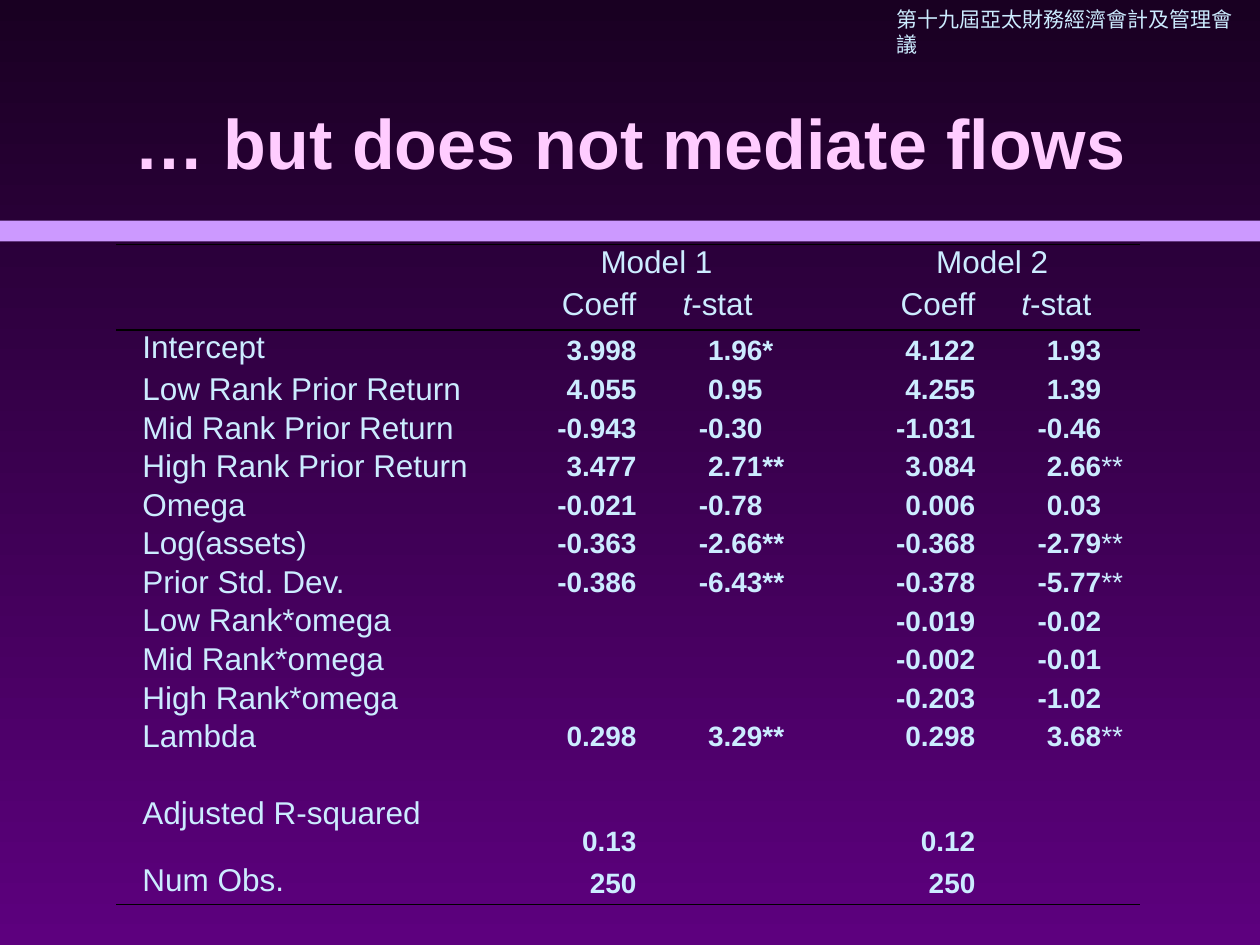
"""Build a slide with a regression table comparing two models of flows."""
from typing import NamedTuple

from lxml import etree
from pptx import Presentation
from pptx.dml.color import RGBColor
from pptx.enum.shapes import MSO_SHAPE
from pptx.enum.text import MSO_ANCHOR, PP_ALIGN
from pptx.oxml.ns import qn
from pptx.util import Cm, Pt

LEFT, CENTER, RIGHT = PP_ALIGN.LEFT, PP_ALIGN.CENTER, PP_ALIGN.RIGHT
TOP, MIDDLE, BOTTOM = MSO_ANCHOR.TOP, MSO_ANCHOR.MIDDLE, MSO_ANCHOR.BOTTOM
RECTANGLE = MSO_SHAPE.RECTANGLE
PLAIN_STYLE = "{2D5ABB26-0587-4C30-8999-92F81FD0307C}"
TITLE_ONLY = 5
COLORS = {
    "night": "190022",
    "violet": "5D007E",
    "band": "CC99FF",
    "title": "FFCCFF",
    "text": "CCECFF",
    "rule": "000000",
}
COLUMN_WIDTHS = [0.53, 7.72, 2.44, 2.34, 1.57, 2.92, 2.34, 0.79]
ROW_HEIGHTS = [0.84] * 3 + [0.76] * 11 + [1.35, 0.84]
LABEL_COLUMN = 1
MODEL_COLUMNS = (2, 5)


class CellStyle(NamedTuple):
    align: PP_ALIGN
    anchor: MSO_ANCHOR
    size: int
    bold: bool = False
    left: float = 0
    right: float = 0
    bottom: float = 0.1


class Estimate(NamedTuple):
    coefficient: str
    t_stat: str = ""
    stars: str = ""


class ResultRow(NamedTuple):
    label: str
    model_1: Estimate
    model_2: Estimate


LABEL = CellStyle(LEFT, TOP, 18, bottom=0)
HEADING = CellStyle(RIGHT, TOP, 18, right=0.2)
COEFFICIENT = CellStyle(RIGHT, BOTTOM, 16, True, right=0.2)
T_STAT = CellStyle(RIGHT, BOTTOM, 16, True)
STARS = CellStyle(LEFT, BOTTOM, 16, True)
MODEL_INDENTS = (0.71, 1.06)
BLANK = Estimate("")
RESULTS = [
    ResultRow("Intercept", Estimate("3.998", "1.96", "*"), Estimate("4.122", "1.93")),
    ResultRow("Low Rank Prior Return", Estimate("4.055", "0.95"), Estimate("4.255", "1.39")),
    ResultRow("Mid Rank Prior Return", Estimate("-0.943", "-0.30"), Estimate("-1.031", "-0.46")),
    ResultRow("High Rank Prior Return", Estimate("3.477", "2.71", "**"), Estimate("3.084", "2.66", "**")),
    ResultRow("Omega", Estimate("-0.021", "-0.78"), Estimate("0.006", "0.03")),
    ResultRow("Log(assets)", Estimate("-0.363", "-2.66", "**"), Estimate("-0.368", "-2.79", "**")),
    ResultRow("Prior Std. Dev.", Estimate("-0.386", "-6.43", "**"), Estimate("-0.378", "-5.77", "**")),
    ResultRow("Low Rank*omega", BLANK, Estimate("-0.019", "-0.02")),
    ResultRow("Mid Rank*omega", BLANK, Estimate("-0.002", "-0.01")),
    ResultRow("High Rank*omega", BLANK, Estimate("-0.203", "-1.02")),
    ResultRow("Lambda", Estimate("0.298", "3.29", "**"), Estimate("0.298", "3.68", "**")),
    ResultRow("", BLANK, BLANK),
    ResultRow("Adjusted R-squared", Estimate("0.13"), Estimate("0.12")),
    ResultRow("Num Obs.", Estimate("250"), Estimate("250")),
]


def color(name: str) -> RGBColor:
    return RGBColor.from_string(COLORS[name])


def format_runs(paragraph, size: int, color_name: str, bold: bool = False, font_name: str = "Arial") -> None:
    for run in paragraph.runs:
        run.font.name = font_name
        run.font.size = Pt(size)
        run.font.bold = bold
        run.font.color.rgb = color(color_name)


def write_cell(cell, text: str, style: CellStyle) -> None:
    if not text:
        return
    paragraph = cell.text_frame.paragraphs[0]
    paragraph.text = text
    paragraph.alignment = style.align
    format_runs(paragraph, style.size, "text", style.bold)
    cell.vertical_anchor = style.anchor
    cell.margin_left = Cm(style.left)
    cell.margin_right = Cm(style.right)
    cell.margin_bottom = Cm(style.bottom)


def write_t_heading(cell) -> None:
    write_cell(cell, "t", HEADING)
    paragraph = cell.text_frame.paragraphs[0]
    paragraph.add_run().text = "-stat"
    format_runs(paragraph, HEADING.size, "text")
    paragraph.runs[0].font.italic = True


def rule_row(table, row: int, edge: str) -> None:
    for column in range(len(COLUMN_WIDTHS)):
        properties = table.cell(row, column)._tc.get_or_add_tcPr()
        line = etree.Element(qn(edge), w=str(Pt(1)))
        fill = etree.SubElement(line, qn("a:solidFill"))
        etree.SubElement(fill, qn("a:srgbClr"), val=COLORS["rule"])
        properties.insert(0, line)


def add_results_table(slide) -> None:
    frame = slide.shapes.add_table(
        len(ROW_HEIGHTS), len(COLUMN_WIDTHS), Cm(2.34), Cm(4.93),
        Cm(sum(COLUMN_WIDTHS)), Cm(sum(ROW_HEIGHTS)))
    frame.element.find(".//" + qn("a:tableStyleId")).text = PLAIN_STYLE
    table = frame.table
    table.first_row = table.horz_banding = False
    for column, width in zip(table.columns, COLUMN_WIDTHS):
        column.width = Cm(width)
    for row, height in zip(table.rows, ROW_HEIGHTS):
        row.height = Cm(height)
    for cell in table.iter_cells():
        cell.fill.background()
        cell.margin_left = cell.margin_right = cell.margin_top = cell.margin_bottom = 0

    for number, (column, indent) in enumerate(zip(MODEL_COLUMNS, MODEL_INDENTS), 1):
        model_cell = table.cell(0, column)
        model_cell.merge(table.cell(0, column + 1))
        write_cell(model_cell, f"Model {number}", CellStyle(CENTER, TOP, 18, left=indent, right=0.2))
        write_cell(table.cell(1, column), "Coeff", HEADING)
        write_t_heading(table.cell(1, column + 1))

    for row, result in enumerate(RESULTS, 2):
        write_cell(table.cell(row, LABEL_COLUMN), result.label, LABEL)
        for column, estimate in zip(MODEL_COLUMNS, (result.model_1, result.model_2)):
            stars_style = STARS._replace(bold=column == MODEL_COLUMNS[0])
            for offset, style in enumerate((COEFFICIENT, T_STAT, stars_style)):
                write_cell(table.cell(row, column + offset), estimate[offset], style)

    rule_row(table, 0, "a:lnT")
    rule_row(table, 1, "a:lnB")
    rule_row(table, len(ROW_HEIGHTS) - 1, "a:lnB")


def set_background(slide) -> None:
    fill = slide.background.fill
    fill.gradient()
    fill.gradient_angle = 270
    for stop, name, position in zip(fill.gradient_stops, ("night", "violet"), (0, 1)):
        stop.color.rgb = color(name)
        stop.position = position


def add_band(slide) -> None:
    band = slide.shapes.add_shape(RECTANGLE, 0, Cm(4.45), Cm(25.4), Cm(0.42))
    band.shadow.inherit = False
    band.fill.solid()
    band.fill.fore_color.rgb = color("band")
    band.line.fill.background()


def add_conference_name(slide) -> None:
    box = slide.shapes.add_textbox(Cm(17.83), 0, Cm(7.57), Cm(0.76))
    box.text_frame.text = "第十九屆亞太財務經濟會計及管理會議"
    format_runs(box.text_frame.paragraphs[0], 12, "text", font_name="Times New Roman")


def write_title(slide) -> None:
    title = slide.shapes.title
    title.left, title.top, title.width, title.height = Cm(1.9), Cm(1.27), Cm(21.6), Cm(3.18)
    title.text_frame.text = "… but does not mediate flows"
    title.text_frame.vertical_anchor = MIDDLE
    paragraph = title.text_frame.paragraphs[0]
    paragraph.alignment = CENTER
    format_runs(paragraph, 40, "title", bold=True)


def main() -> None:
    presentation = Presentation()
    presentation.slide_width, presentation.slide_height = Cm(25.4), Cm(19.05)
    slide = presentation.slides.add_slide(presentation.slide_layouts[TITLE_ONLY])
    set_background(slide)
    add_band(slide)
    add_conference_name(slide)
    write_title(slide)
    add_results_table(slide)
    presentation.save("out.pptx")


if __name__ == "__main__":
    main()
